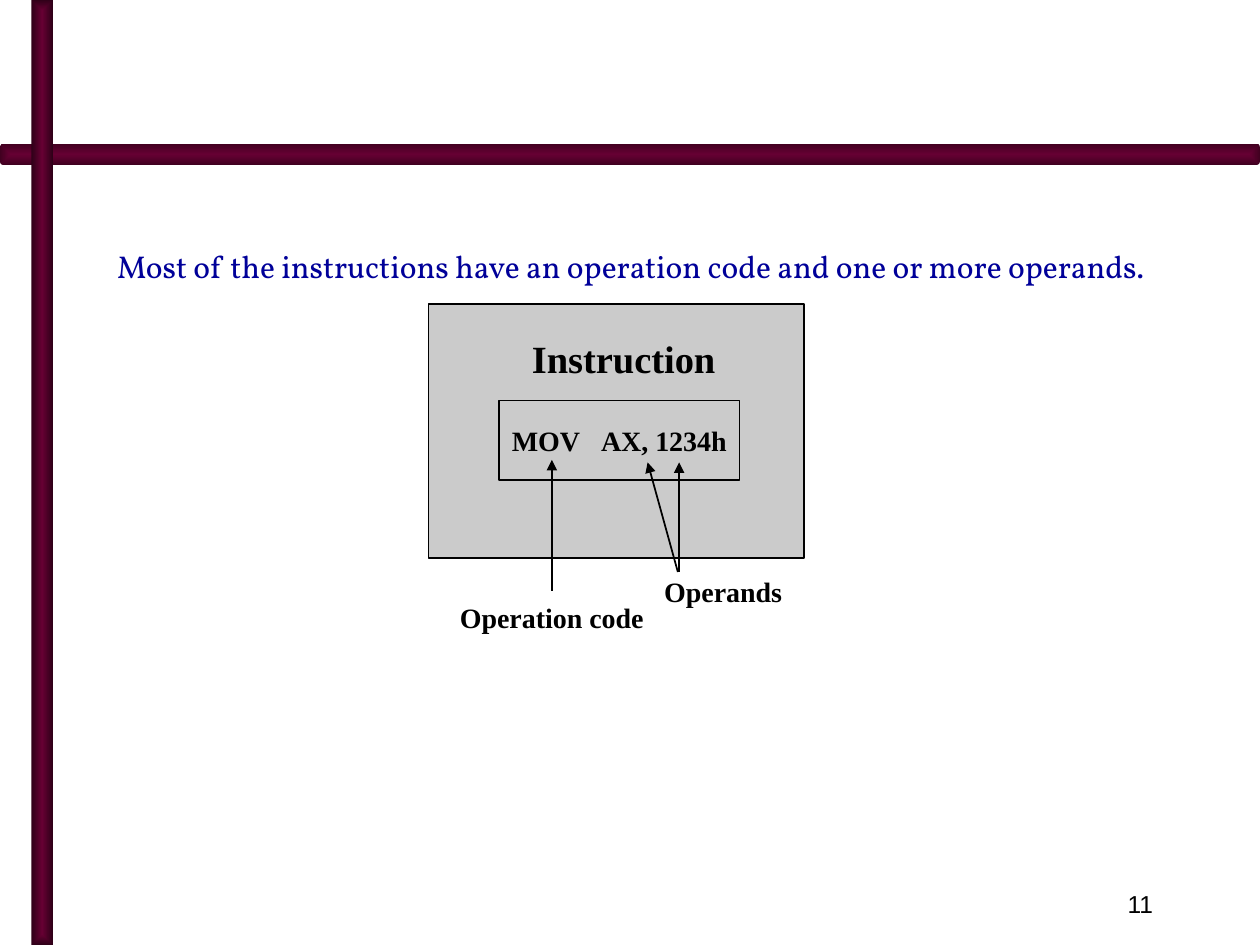
from dataclasses import dataclass

from lxml import etree
from pptx import Presentation
from pptx.dml.color import RGBColor
from pptx.enum.shapes import MSO_CONNECTOR, MSO_SHAPE
from pptx.enum.text import MSO_ANCHOR, MSO_AUTO_SIZE, PP_ALIGN
from pptx.oxml.ns import qn
from pptx.util import Inches, Pt

RECT, ROUNDED = MSO_SHAPE.RECTANGLE, MSO_SHAPE.ROUNDED_RECTANGLE
STRAIGHT = MSO_CONNECTOR.STRAIGHT
TOP, MIDDLE, BOTTOM = MSO_ANCHOR.TOP, MSO_ANCHOR.MIDDLE, MSO_ANCHOR.BOTTOM
LEFT, CENTER, RIGHT = PP_ALIGN.LEFT, PP_ALIGN.CENTER, PP_ALIGN.RIGHT
TITLE_ONLY = 5


@dataclass(frozen=True)
class Theme:
    bar: str = "660033"
    bar_edge_h: str = "410020"
    bar_edge_v: str = "2F0018"
    panel: str = "CBCBCB"
    ink: str = "000000"
    title: str = "000099"
    title_font: str = "Vollkorn"
    label_font: str = "Times New Roman"
    number_font: str = "Arial"
    title_size: int = 18
    heading_size: int = 22
    label_size: int = 16
    number_size: int = 14
    line_width: int = 1


THEME = Theme()


def rgb(value):
    return RGBColor.from_string(value)


def box(left, top, width, height):
    return [Inches(v) for v in (left, top, width, height)]


def write_text(sp, text, size=THEME.label_size, font=THEME.label_font,
               color=THEME.ink, bold=True, align=CENTER, anchor=TOP,
               wrap=True, gap=0):
    """Fill sp with one paragraph; gap widens its first space, in points."""
    tf = sp.text_frame
    tf.auto_size = MSO_AUTO_SIZE.NONE
    tf.word_wrap = wrap
    tf.vertical_anchor = anchor
    p = tf.paragraphs[0]
    p.alignment = align
    for part in text.partition(" ") if gap else [text]:
        r = p.add_run()
        r.text = part
        r.font.name = font
        r.font.size = Pt(size)
        r.font.bold = bold
        r.font.color.rgb = rgb(color)
        if part == " ":
            r.font._element.set("spc", str(gap * 100))


def add_bar(shapes, kind, place, edge):
    """Bar shaded from its centre line towards its outline."""
    sp = shapes.add_shape(kind, *box(*place))
    sp.shadow.inherit = False
    sp.line.fill.background()
    sp.fill.gradient()
    for stop, color, position in zip(sp.fill.gradient_stops, (THEME.bar, edge), (0, 1)):
        stop.color.rgb = rgb(color)
        stop.position = position
    grad = sp._element.spPr.find(qn("a:gradFill"))
    grad.remove(grad.find(qn("a:lin")))
    shading = etree.SubElement(grad, qn("a:path"), path="shape")
    etree.SubElement(shading, qn("a:fillToRect"),
                     dict.fromkeys("ltrb", "50000"))
    return sp


def add_panel(shapes, place):
    sp = shapes.add_shape(RECT, *box(*place))
    sp.shadow.inherit = False
    sp.fill.solid()
    sp.fill.fore_color.rgb = rgb(THEME.panel)
    sp.line.color.rgb = rgb(THEME.ink)
    sp.line.width = Pt(THEME.line_width)
    return sp


def add_label(shapes, place, text, **fmt):
    write_text(shapes.add_textbox(*box(*place)), text, **fmt)


def add_arrow(shapes, start, end):
    line = shapes.add_connector(STRAIGHT, *[Inches(v) for v in (*start, *end)])
    line.line.color.rgb = rgb(THEME.ink)
    line.line.width = Pt(THEME.line_width)
    etree.SubElement(line.line._get_or_add_ln(), qn("a:tailEnd"), type="triangle")
    etree.SubElement(line._element.spPr, qn("a:effectLst"))


def add_title(slide, place, text):
    title = slide.shapes.title
    title.left, title.top, title.width, title.height = box(*place)
    write_text(title, text, size=THEME.title_size, font=THEME.title_font,
               color=THEME.title, bold=False, align=LEFT, anchor=BOTTOM)


def add_instruction_diagram(slide):
    shapes = slide.shapes.add_group_shape().shapes
    add_panel(shapes, (3.4, 2.41, 2.98, 2.02))
    code = add_panel(shapes, (3.96, 3.18, 1.91, 0.63))
    write_text(code, "MOV AX, 1234h", anchor=MIDDLE, wrap=False, gap=8)
    add_label(shapes, (3.53, 4.72, 1.7, 0.37), "Operation code")
    add_label(shapes, (3.88, 2.61, 2.14, 0.47), "Instruction", size=THEME.heading_size)
    add_label(shapes, (4.89, 4.51, 1.7, 0.37), "Operands")
    for start, end in (((4.38, 4.69), (4.38, 3.65)),
                       ((5.38, 4.54), (5.14, 3.67)),
                       ((5.39, 4.54), (5.39, 3.67))):
        add_arrow(shapes, start, end)


def main():
    prs = Presentation()
    prs.slide_width, prs.slide_height = Inches(10), Inches(7.5)
    slide = prs.slides.add_slide(prs.slide_layouts[TITLE_ONLY])
    add_bar(slide.shapes, ROUNDED, (0, 1.14, 10, 0.17), THEME.bar_edge_h)
    add_bar(slide.shapes, RECT, (0.25, 0, 0.17, 7.5), THEME.bar_edge_v)
    add_label(slide.shapes, (7.17, 6.92, 2.08, 0.5), "11", size=THEME.number_size,
              font=THEME.number_font, bold=False, align=RIGHT, anchor=MIDDLE)
    add_title(slide, (0.83, 1.35, 8.98, 0.96),
              "Most of the instructions have an operation code and one or more operands.")
    add_instruction_diagram(slide)
    prs.save("out.pptx")


if __name__ == "__main__":
    main()
